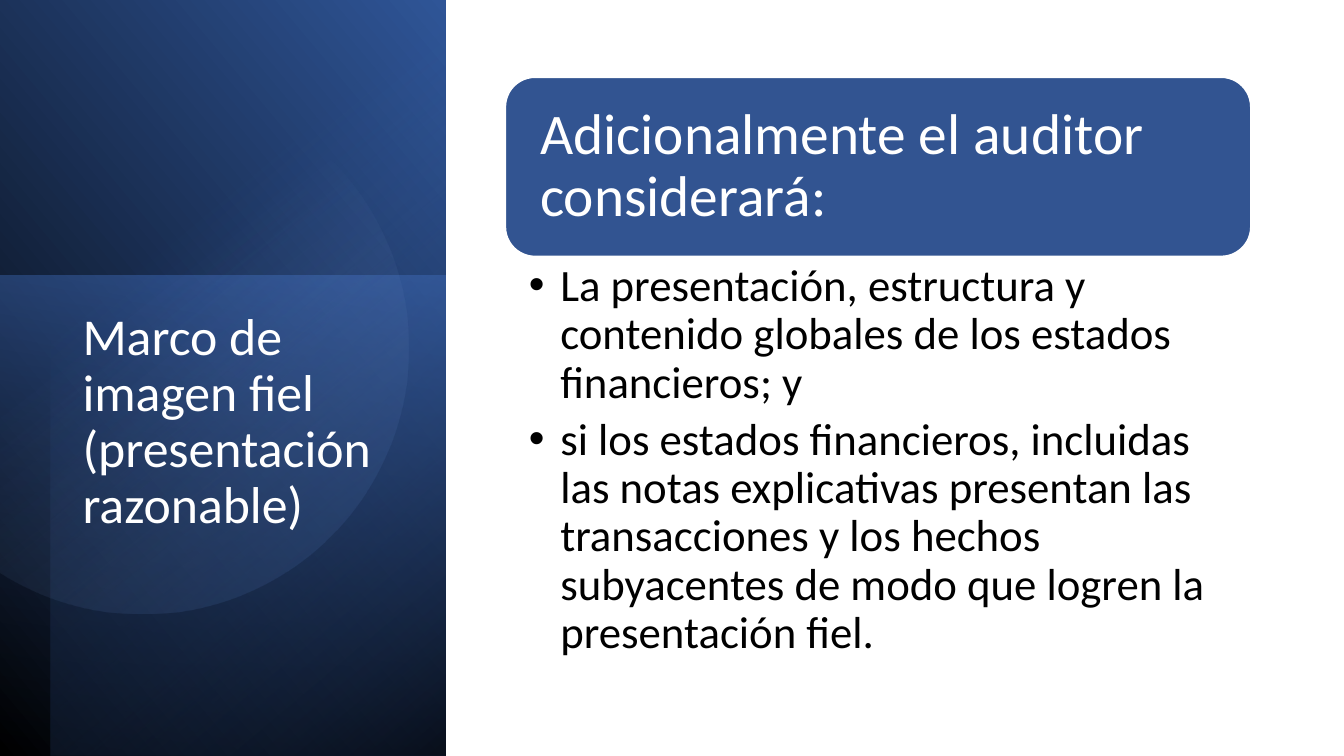
from math import acos, cos, sin

from lxml.etree import SubElement
from pptx import Presentation
from pptx.dml.color import RGBColor
from pptx.enum.shapes import MSO_SHAPE
from pptx.enum.text import MSO_ANCHOR, MSO_AUTO_SIZE, PP_ALIGN
from pptx.oxml.ns import qn
from pptx.util import Cm, Pt

COLORS = {
    "black": "000000",
    "white": "FFFFFF",
    "navy": "203864",
    "deep": "2F5597",
    "blue": "4472C4",
    "pale": "8FAADC",
    "header": "325491",
}
FONT = "Calibri"
SLIDE_W, SLIDE_H = 33.87, 19.05
PANEL_W = 11.23


def rgb(name):
    return RGBColor.from_string(COLORS[name])


def fill_gradient(sp, angle, stops):
    """Clockwise angle in degrees; stops are (position %, colour, opacity %)."""
    sp.shadow.inherit = False
    sp.line.fill.background()
    sp.fill.gradient()
    grad = sp.element.spPr.find(qn("a:gradFill"))
    for child in list(grad):
        grad.remove(child)
    gs_list = SubElement(grad, qn("a:gsLst"))
    for pos, color, opacity in stops:
        gs = SubElement(gs_list, qn("a:gs"), pos=str(pos * 1000))
        clr = SubElement(gs, qn("a:srgbClr"), val=COLORS[color])
        if opacity < 100:
            SubElement(clr, qn("a:alpha"), val=str(opacity * 1000))
    SubElement(grad, qn("a:lin"), ang=str(angle * 60000), scaled="0")


def place(sp, x, y, w, h):
    sp.left, sp.top, sp.width, sp.height = Cm(x), Cm(y), Cm(w), Cm(h)
    # Bring to the front
    sp.element.getparent().append(sp.element)


def write(tf, *texts, size, color, after=0, margins=(0.25, 0.13, 0.25, 0.13),
          anchor=MSO_ANCHOR.TOP, bullet_indent=0):
    tf.word_wrap = True
    tf.auto_size = MSO_AUTO_SIZE.NONE
    tf.vertical_anchor = anchor
    tf.margin_left, tf.margin_top, tf.margin_right, tf.margin_bottom = map(Cm, margins)
    for i, text in enumerate(texts):
        p = tf.add_paragraph() if i else tf.paragraphs[0]
        p.alignment = PP_ALIGN.LEFT
        p.line_spacing = 0.9
        p.space_before, p.space_after = Pt(0), Pt(after)
        r = p.add_run()
        r.text = text
        r.font.name, r.font.size = FONT, Pt(size)
        r.font.color.rgb = rgb(color)
        if bullet_indent:
            pPr = p._p.get_or_add_pPr()
            pPr.set("marL", str(Cm(bullet_indent)))
            pPr.set("indent", str(-Cm(bullet_indent)))
            SubElement(pPr, qn("a:buChar"), char="•")


def add_side_panel(s, x, y, w, h):
    # Layered gradients: inset from left, inset from top, angle, stops
    layers = [
        (0, 0, 320, [(0, "black", 100), (100, "deep", 100)]),
        (0, 6.95, 100, [(0, "blue", 50), (100, "navy", 0)]),
        (1.27, 0, 230, [(0, "black", 59), (69, "blue", 0), (100, "blue", 0)]),
    ]
    for dx, dy, angle, stops in layers:
        sp = s.shapes.add_shape(MSO_SHAPE.RECTANGLE, Cm(x + dx), Cm(y + dy),
                                Cm(w - dx), Cm(h - dy))
        fill_gradient(sp, angle, stops)

    # Circle cut off by the panel's left edge
    cx, cy, radius, steps = 3.6, 8.77, 6.7, 120
    limit = acos(-cx / radius)
    angles = [limit * (2 * i / steps - 1) for i in range(steps + 1)]
    points = [(Cm(x + cx + radius * cos(a)), Cm(y + cy + radius * sin(a)))
              for a in angles]
    builder = s.shapes.build_freeform(*points[0])
    builder.add_line_segments(points[1:], close=True)
    fill_gradient(builder.convert_to_shape(), 52,
                  [(0, "pale", 0), (39, "pale", 0), (100, "deep", 26)])

    # Title
    title = s.shapes.title
    place(title, x + 1.83, y + 7.7, 8, 8.53)
    write(title.text_frame, "Marco de imagen fiel (presentación razonable)",
          size=37, color="white")


def add_considerations(s, x, y, w, h):
    # Header
    header_h = 4.53
    sp = s.shapes.add_shape(MSO_SHAPE.ROUNDED_RECTANGLE, Cm(x), Cm(y), Cm(w), Cm(header_h))
    sp.shadow.inherit = False
    sp.fill.solid()
    sp.fill.fore_color.rgb = rgb("header")
    sp.line.color.rgb = rgb("white")
    sp.line.width = Pt(1.5)
    write(sp.text_frame, "Adicionalmente el auditor considerará:", size=41,
          color="white", anchor=MSO_ANCHOR.MIDDLE, margins=(0.66, 0.43, 0.66, 0.43))

    # Bullet list
    body = s.placeholders[1]
    place(body, x, y + header_h, w, h - header_h)
    write(body.text_frame,
          "La presentación, estructura y contenido globales de los estados financieros; y",
          "si los estados financieros, incluidas las notas explicativas presentan las "
          "transacciones y los hechos subyacentes de modo que logren la presentación fiel.",
          size=32, color="black", after=6, margins=(0.6, 0.15, 0.81, 0.15),
          bullet_indent=0.79)


def main():
    prs = Presentation()
    prs.slide_width, prs.slide_height = Cm(SLIDE_W), Cm(SLIDE_H)
    s = prs.slides.add_slide(prs.slide_layouts[1])
    s.background.fill.solid()
    s.background.fill.fore_color.rgb = rgb("white")
    add_side_panel(s, 0, 0, PANEL_W, SLIDE_H)
    add_considerations(s, 12.73, 1.94, 18.8, 15.15)
    prs.save("out.pptx")


if __name__ == "__main__":
    main()
